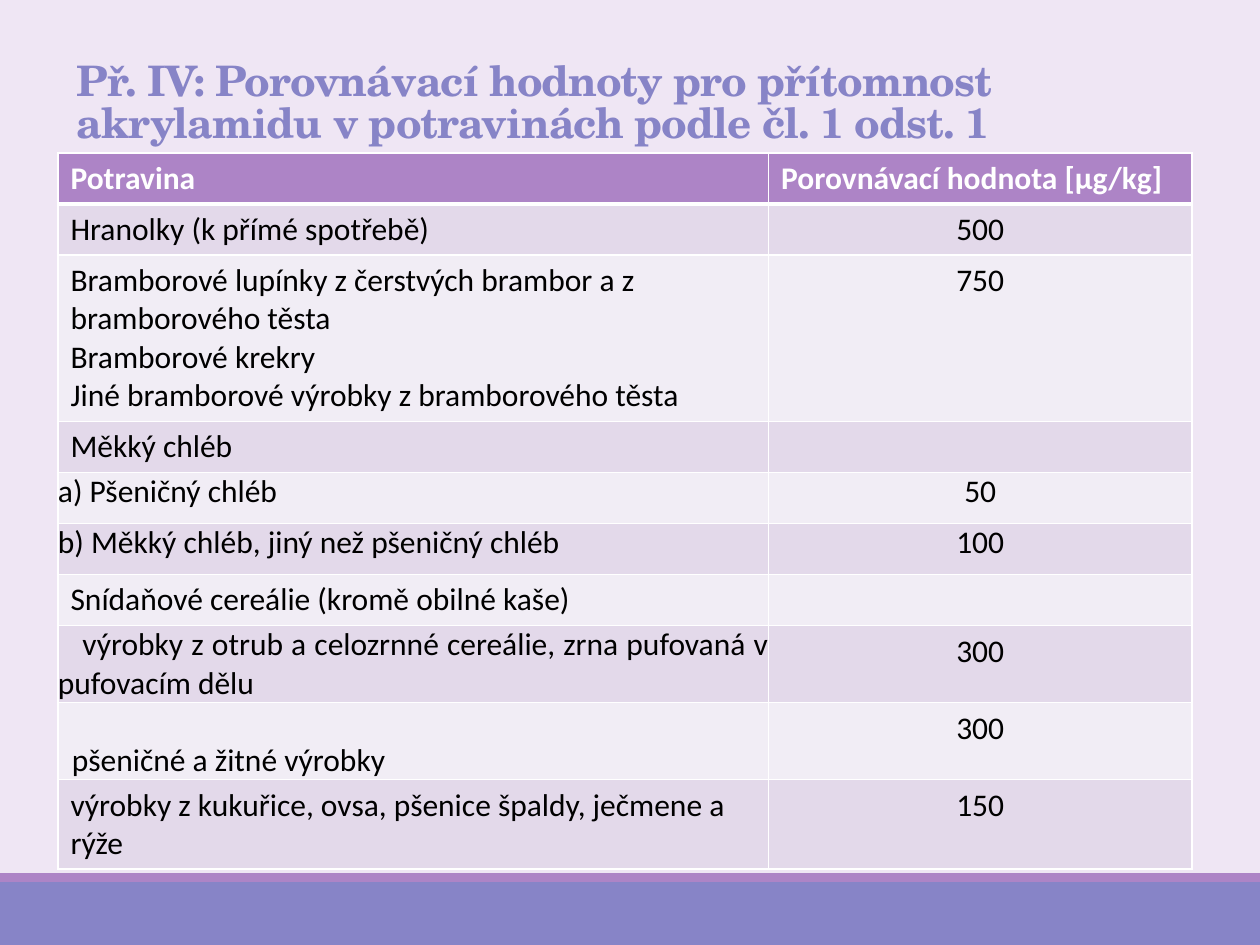
"""Build a slide with a table of acrylamide benchmark levels in foods."""
from dataclasses import dataclass

import lxml.etree
import pptx
import pptx.dml.color
import pptx.enum.shapes
import pptx.enum.text
import pptx.oxml.ns
import pptx.util

Pt = pptx.util.Pt
ALIGN = pptx.enum.text.PP_ALIGN
ANCHOR = pptx.enum.text.MSO_ANCHOR
VIOLET, BLUE, WHITE, BLACK = "AD84C6", "8784C7", "FFFFFF", "000000"
BANDS = ("E3D9EA", "F1EDF5")
LINE_HEIGHT = 29.2


@dataclass(frozen=True)
class Bar:
    top: float
    height: float
    color: str


@dataclass(frozen=True)
class Food:
    name: str
    level: str = ""
    height: float = LINE_HEIGHT
    flush_name: bool = False
    flush_level: bool = False
    indent: float = 0
    anchor: ANCHOR = ANCHOR.TOP


BARS = (Bar(504, 36, BLUE), Bar(499, 5, VIOLET))
FOODS = (
    Food("Hranolky (k přímé spotřebě)", "500"),
    Food("Bramborové lupínky z čerstvých brambor a z bramborového těsta\n"
         "Bramborové krekry\nJiné bramborové výrobky z bramborového těsta", "750", 95.1),
    Food("Měkký chléb"),
    Food("a) Pšeničný chléb", "50", flush_name=True, flush_level=True),
    Food("b) Měkký chléb, jiný než pšeničný chléb", "100", flush_name=True, flush_level=True),
    Food("Snídaňové cereálie (kromě obilné kaše)"),
    Food("výrobky z otrub a celozrnné cereálie, zrna pufovaná v pufovacím dělu",
         "300", 44, flush_name=True, indent=14),
    Food("pšeničné a žitné výrobky", "300", 44, flush_name=True, indent=8,
         anchor=ANCHOR.BOTTOM),
    Food("výrobky z kukuřice, ovsa, pšenice špaldy, ječmene a rýže", "150", 51.1),
)


def paint(target, color: str) -> None:
    """Give a fill a solid colour."""
    target.solid()
    target.fore_color.rgb = pptx.dml.color.RGBColor.from_string(color)


def style(paragraph, name: str, size: float, color: str, bold: bool) -> None:
    """Set the font of a whole paragraph."""
    font = paragraph.font
    font.name, font.size, font.bold = name, Pt(size), bold
    paint(font.fill, color)


def add_bar(page, bar: Bar) -> None:
    """Draw a full-width bar."""
    shape = page.shapes.add_shape(pptx.enum.shapes.MSO_SHAPE.RECTANGLE,
                                  0, Pt(bar.top), Pt(720), Pt(bar.height))
    shape.shadow.inherit = False
    paint(shape.fill, bar.color)
    shape.line.fill.background()


def add_title(page, text: str) -> None:
    """Place the slide title."""
    box = page.shapes.add_textbox(Pt(36.7), Pt(15.1), Pt(648), Pt(72.7))
    frame = box.text_frame
    frame.word_wrap, frame.vertical_anchor = True, ANCHOR.BOTTOM
    frame.text = text
    paragraph = frame.paragraphs[0]
    paragraph.line_spacing = 0.85
    style(paragraph, "TeX Gyre Schola", 24, BLUE, True)
    paragraph.font._element.set("spc", "-50")


def add_borders(cell, bottom: float) -> None:
    """Edge a cell in white."""
    properties = cell._tc.get_or_add_tcPr()
    for side, width in (("lnL", 1), ("lnR", 1), ("lnT", 1), ("lnB", bottom)):
        edge = lxml.etree.SubElement(properties, pptx.oxml.ns.qn(f"a:{side}"), w=str(Pt(width)))
        solid = lxml.etree.SubElement(edge, pptx.oxml.ns.qn("a:solidFill"))
        lxml.etree.SubElement(solid, pptx.oxml.ns.qn("a:srgbClr"), val=WHITE)


def fill_cell(cell, text: str, fill: str, align: ALIGN, header: bool = False,
              flush: bool = False, indent: float = 0, anchor: ANCHOR = ANCHOR.TOP) -> None:
    """Write and format one table cell."""
    add_borders(cell, 3 if header else 1)
    paint(cell.fill, fill)
    cell.vertical_anchor = anchor
    if flush:
        cell.margin_left = cell.margin_right = cell.margin_top = cell.margin_bottom = 0
    cell.text_frame.text = text
    for paragraph in cell.text_frame.paragraphs:
        paragraph.alignment = align
        style(paragraph, "Calibri", 18, WHITE if header else BLACK, header)
        if indent:
            paragraph._p.get_or_add_pPr().set("indent", str(Pt(indent)))


def add_food_table(page, foods: tuple[Food, ...]) -> None:
    """Draw the table of foods and benchmark levels."""
    height = LINE_HEIGHT + sum(food.height for food in foods)
    table = page.shapes.add_table(len(foods) + 1, 2, Pt(33.1), Pt(87.3),
                                  Pt(648), Pt(height)).table
    for column, width in zip(table.columns, (406.1, 241.9)):
        column.width = Pt(width)
    table.rows[0].height = Pt(LINE_HEIGHT)
    for column, label in enumerate(("Potravina", "Porovnávací hodnota [μg/kg]")):
        fill_cell(table.cell(0, column), label, VIOLET, ALIGN.LEFT, header=True)
    for row, food in enumerate(foods, 1):
        table.rows[row].height = Pt(food.height)
        band = BANDS[(row - 1) % 2]
        fill_cell(table.cell(row, 0), food.name, band,
                  ALIGN.JUSTIFY if food.flush_name else ALIGN.LEFT,
                  flush=food.flush_name, indent=food.indent, anchor=food.anchor)
        fill_cell(table.cell(row, 1), food.level, band, ALIGN.CENTER, flush=food.flush_level)


def main() -> None:
    """Build and save the deck."""
    deck = pptx.Presentation()
    deck.slide_width, deck.slide_height = Pt(720), Pt(540)
    page = deck.slides.add_slide(deck.slide_layouts[6])
    paint(page.background.fill, "EFE6F4")
    for bar in BARS:
        add_bar(page, bar)
    add_title(page, "Př. IV: Porovnávací hodnoty pro přítomnost akrylamidu "
                    "v potravinách podle čl. 1 odst. 1")
    add_food_table(page, FOODS)
    deck.save("out.pptx")


if __name__ == "__main__":
    main()
